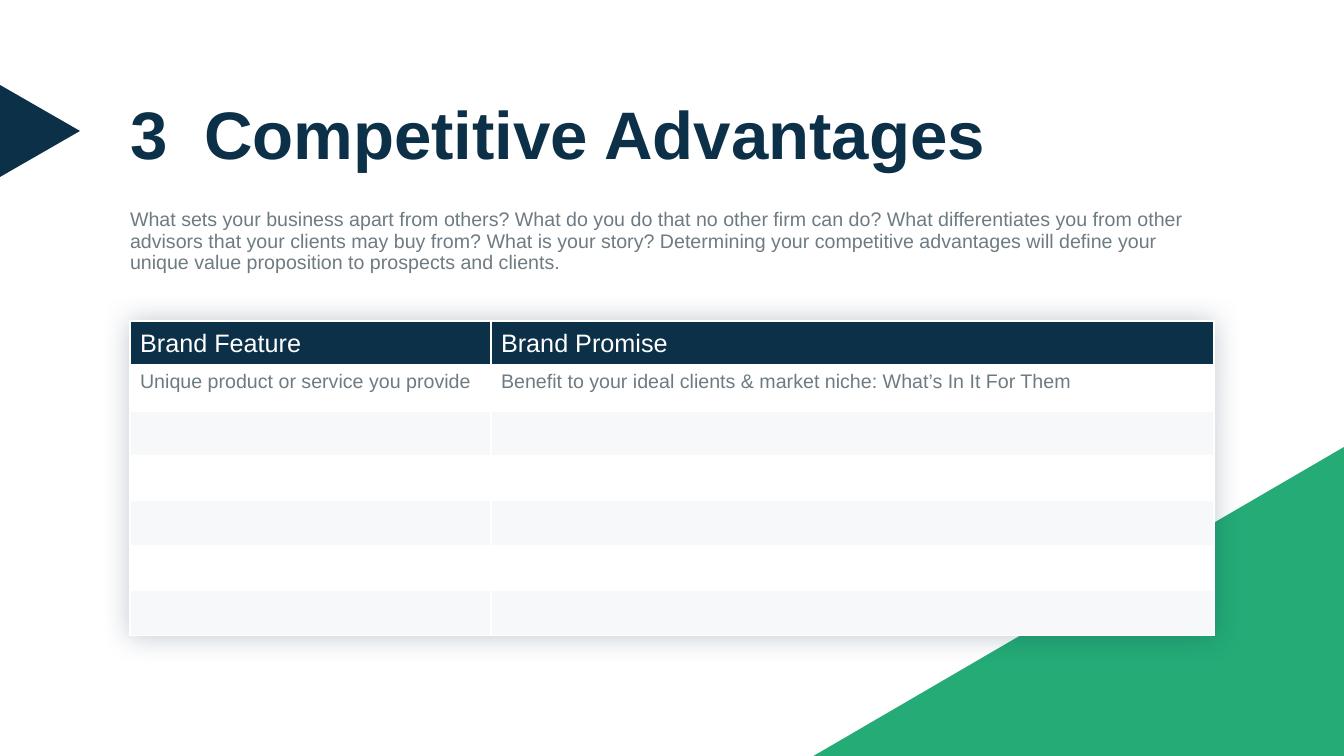
from lxml import etree
from pptx import Presentation
from pptx.dml.color import RGBColor
from pptx.enum.shapes import MSO_SHAPE
from pptx.enum.text import MSO_ANCHOR, MSO_AUTO_SIZE, PP_ALIGN
from pptx.oxml import parse_xml
from pptx.oxml.ns import nsdecls, qn
from pptx.util import Pt

RIGHT, POINT = MSO_SHAPE.RIGHT_TRIANGLE, MSO_SHAPE.ISOSCELES_TRIANGLE
TOP, MIDDLE = MSO_ANCHOR.TOP, MSO_ANCHOR.MIDDLE
GROW = MSO_AUTO_SIZE.SHAPE_TO_FIT_TEXT
LEFT = PP_ALIGN.LEFT
SCALE = 914400 / 100.8
FONT = "Arial"
HUES = {
    "navy": "0D3049",
    "green": "24AB76",
    "gray": "6E7B82",
    "white": "FFFFFF",
    "stripe": "F6F8FA",
}


def px(*sizes):
    return [round(size * SCALE) for size in sizes]


def write(para, text, size, hue, bold=False):
    run = para.add_run()
    run.text = text
    run.font.name = FONT
    run.font.size = Pt(size)
    run.font.bold = bold
    run.font.color.rgb = RGBColor.from_string(HUES[hue])


deck = Presentation()
deck.slide_width, deck.slide_height = px(1344, 756)
slide = deck.slides.add_slide(deck.slide_layouts[5])
shapes = slide.shapes
title = shapes.title

marks = []
for kind, box, hue in [
    (RIGHT, (810, 447, 534, 311), "green"),
    (POINT, (-6, 91, 92, 80), "navy"),
]:
    mark = shapes.add_shape(kind, *px(*box))
    mark.shadow.inherit = False
    mark.fill.solid()
    mark.fill.fore_color.rgb = RGBColor.from_string(HUES[hue])
    mark.line.fill.background()
    marks.append(mark)
corner, arrow = marks
corner.element.spPr.find(qn("a:xfrm")).set("flipH", "1")
arrow.rotation = 90

title.left, title.top, title.width, title.height = px(130, 101, 1084, 76)
intro = shapes.add_textbox(*px(130, 210, 1084, 65))
for shape in (title, intro):
    frame = shape.text_frame
    frame.word_wrap = True
    frame.auto_size = GROW
    frame.vertical_anchor = TOP
    frame.margin_left = frame.margin_right = 0
    frame.margin_top = frame.margin_bottom = 0
    para = frame.paragraphs[0]
    para.alignment = LEFT
    para.line_spacing = 0.9

head = title.text_frame.paragraphs[0]
tabs = etree.SubElement(head._p.get_or_add_pPr(), qn("a:tabLst"))
etree.SubElement(tabs, qn("a:tab"), pos=str(px(74)[0]), algn="l")
write(head, "3\tCompetitive Advantages", 48, "navy", True)
write(
    intro.text_frame.paragraphs[0],
    "What sets your business apart from others? What do you do that no other firm can do? "
    "What differentiates you from other advisors that your clients may buy from? "
    "What is your story? Determining your competitive advantages will define your "
    "unique value proposition to prospects and clients.",
    14,
    "gray",
)

rows = [
    ("Brand Feature", "Brand Promise"),
    (
        "Unique product or service you provide",
        "Benefit to your ideal clients & market niche: What’s In It For Them",
    ),
] + [("", "")] * 5
table = shapes.add_table(len(rows), 2, *px(130, 321, 1084, 315)).table
for col, width in zip(table.columns, px(361, 723)):
    col.width = width
table._tbl.tblPr.insert(0, parse_xml(
    f'<a:effectLst {nsdecls("a")}><a:outerShdw blurRad="254000" algn="ctr" rotWithShape="0">'
    f'<a:srgbClr val="{HUES["navy"]}"><a:alpha val="25000"/></a:srgbClr>'
    "</a:outerShdw></a:effectLst>"
))

for r, texts in enumerate(rows):
    table.rows[r].height = px(45)[0]
    size, ink = (14, "gray") if r else (18, "white")
    back = ("white" if r % 2 else "stripe") if r else "navy"
    for c, text in enumerate(texts):
        cell = table.cell(r, c)
        cell.vertical_anchor = TOP if r else MIDDLE
        if text:
            write(cell.text_frame.paragraphs[0], text, size, ink)
        props = cell._tc.get_or_add_tcPr()
        for side in "LRTB":
            wide = 3 if (r == 0 and side == "B") or (r == 1 and side == "T") else 1
            edge = etree.SubElement(props, qn(f"a:ln{side}"), w=str(Pt(wide)))
            fill = etree.SubElement(edge, qn("a:solidFill"))
            etree.SubElement(fill, qn("a:srgbClr"), val=HUES["white"])
        cell.fill.solid()
        cell.fill.fore_color.rgb = RGBColor.from_string(HUES[back])

deck.save("out.pptx")
